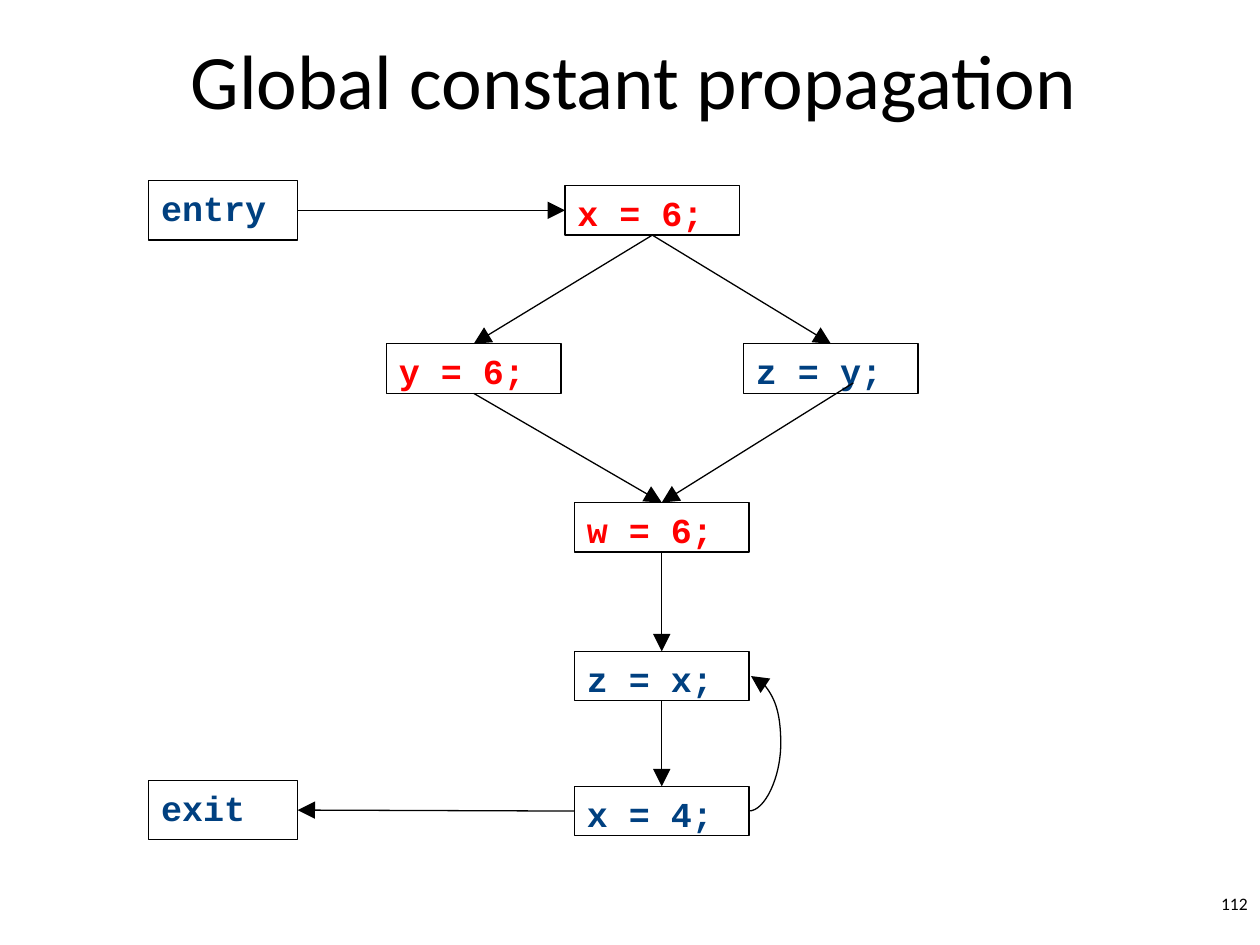
import pptx
import pptx.dml.color
import pptx.enum.shapes
import pptx.enum.text
import pptx.oxml
import pptx.oxml.ns
import pptx.util

Cm = pptx.util.Cm
Pt = pptx.util.Pt
ALIGN = pptx.enum.text.PP_ALIGN
ANCHOR = pptx.enum.text.MSO_ANCHOR
CONNECTOR = pptx.enum.shapes.MSO_CONNECTOR

COLOURS = {"ink": "000000", "code": "004080", "constant": "FF0000"}
CODE_FONT = {"name": "Courier New", "size": Pt(20), "bold": True}
TITLE_FONT = {"name": "Calibri", "size": Pt(44)}
NUMBER_FONT = {"name": "Calibri", "size": Pt(10)}
TOP_FRAME = {"word_wrap": True, "vertical_anchor": ANCHOR.TOP}
MIDDLE_FRAME = {"word_wrap": True, "vertical_anchor": ANCHOR.MIDDLE}

STATEMENT = (3.52, 1.0)
TERMINAL = (3.0, 1.2)
BLOCKS = {
    "exit": ("exit", 3.0, 15.73, TERMINAL, "code"),
    "reset": ("x = 4;", 11.58, 15.85, STATEMENT, "code"),
    "loop": ("z = x;", 11.58, 13.13, STATEMENT, "code"),
    "join": ("w = 6;", 11.58, 10.13, STATEMENT, "constant"),
    "left": ("y = 6;", 7.79, 6.93, STATEMENT, "constant"),
    "right": ("z = y;", 14.99, 6.93, STATEMENT, "code"),
    "start": ("x = 6;", 11.39, 3.74, STATEMENT, "constant"),
    "entry": ("entry", 3.0, 3.64, TERMINAL, "code"),
}
SIDES = {"top": (0.5, 0), "bottom": (0.5, 1), "left": (0, 0.5), "right": (1, 0.5)}
FLOWS = [
    ("loop", "bottom", "reset", "top"),
    ("reset", "left", "exit", "right"),
    ("join", "bottom", "loop", "top"),
    ("left", "bottom", "join", "top"),
    ("start", "bottom", "left", "top"),
    ("start", "bottom", "right", "top"),
    ("entry", "right", "start", "left"),
]
RIGHT_BRANCH_START = (17.2, 7.72)
LOOP_END_GAP = 0.04
LOOP_BULGE = 0.64


def rgb(colour):
    return pptx.dml.color.RGBColor.from_string(COLOURS[colour])


def apply(target, values):
    for attribute, value in values.items():
        setattr(target, attribute, value)


def write(shape, text, font, colour, frame, align):
    apply(shape.text_frame, frame)
    paragraph = shape.text_frame.paragraphs[0]
    paragraph.alignment = align
    run = paragraph.add_run()
    run.text = text
    apply(run.font, font)
    run.font.color.rgb = rgb(colour)


def style_line(line):
    line.color.rgb = rgb("ink")
    line.width = Pt(0.75)


def add_label(slide, box, text, font, frame, align):
    label = slide.shapes.add_textbox(*map(Cm, box))
    write(label, text, font, "ink", frame, align)


def add_block(slide, text, left, top, size, colour):
    block = slide.shapes.add_shape(
        pptx.enum.shapes.MSO_SHAPE.RECTANGLE, *map(Cm, (left, top, *size)))
    block.shadow.inherit = False
    block.fill.background()
    style_line(block.line)
    write(block, text, CODE_FONT, colour, TOP_FRAME, ALIGN.LEFT)


def side_point(block, side):
    text, left, top, (width, height), colour = BLOCKS[block]
    across, down = SIDES[side]
    return left + across * width, top + down * height


def add_arrow(slide, start, end, kind=CONNECTOR.STRAIGHT):
    arrow = slide.shapes.add_connector(kind, *map(Cm, (*start, *end)))
    style_line(arrow.line)
    properties = arrow._element.spPr
    head = pptx.oxml.parse_xml(
        f'<a:tailEnd {pptx.oxml.ns.nsdecls("a")} type="triangle" w="lg" len="lg"/>')
    properties.find(pptx.oxml.ns.qn("a:ln")).append(head)
    effects = pptx.oxml.parse_xml(f'<a:effectLst {pptx.oxml.ns.nsdecls("a")}/>')
    properties.append(effects)
    return arrow


def add_loop_arrow(slide):
    start = side_point("reset", "right")
    right, middle = side_point("loop", "right")
    arrow = add_arrow(slide, start, (right + LOOP_END_GAP, middle), CONNECTOR.CURVE)
    bend = round(LOOP_BULGE / LOOP_END_GAP * 100000)
    guide = pptx.oxml.parse_xml(
        f'<a:gd {pptx.oxml.ns.nsdecls("a")} name="adj1" fmla="val {bend}"/>')
    arrow._element.spPr.find(".//" + pptx.oxml.ns.qn("a:avLst")).append(guide)


def main():
    deck = pptx.Presentation()
    deck.slide_width, deck.slide_height = Cm(25.4), Cm(19.05)
    slide = deck.slides.add_slide(deck.slide_layouts[6])
    add_label(slide, (1.98, 0, 21.59, 3.18), "Global constant propagation",
              TITLE_FONT, MIDDLE_FRAME, ALIGN.CENTER)
    add_label(slide, (20.12, 17.88, 5.28, 0.76), "112",
              NUMBER_FONT, TOP_FRAME, ALIGN.RIGHT)
    for block in BLOCKS.values():
        add_block(slide, *block)
    for source, source_side, target, target_side in FLOWS:
        add_arrow(slide, side_point(source, source_side), side_point(target, target_side))
    add_arrow(slide, RIGHT_BRANCH_START, side_point("join", "top"))
    add_loop_arrow(slide)
    deck.save("out.pptx")


if __name__ == "__main__":
    main()
